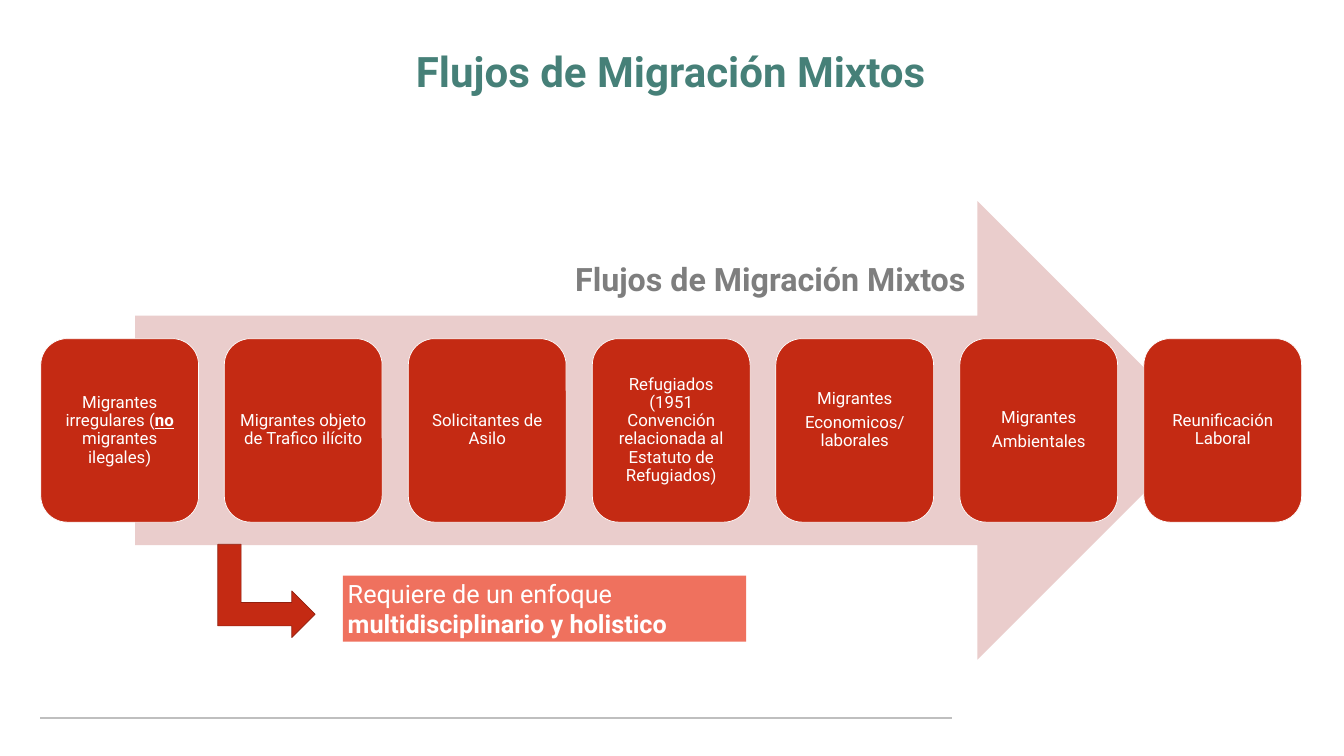
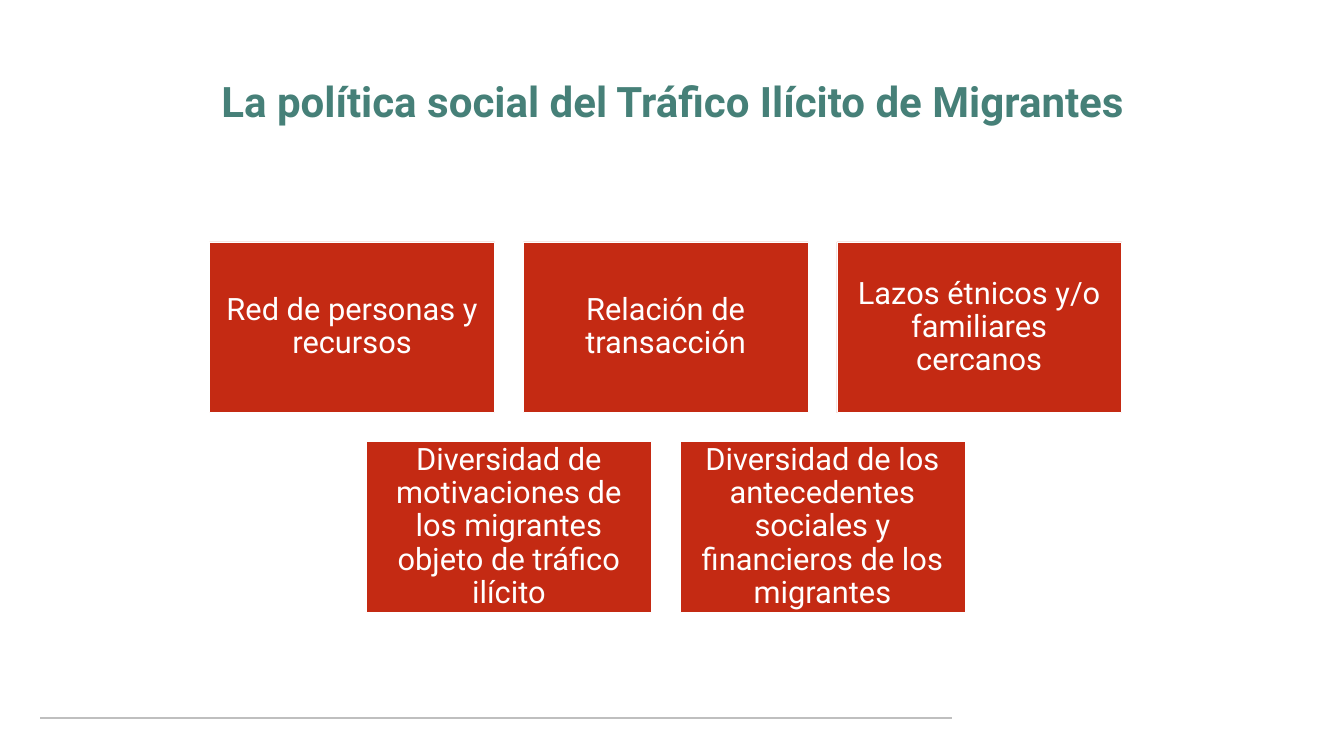
from lxml import etree
from pptx import Presentation
from pptx.dml.color import RGBColor
from pptx.enum.shapes import MSO_CONNECTOR, MSO_SHAPE
from pptx.enum.text import MSO_ANCHOR, PP_ALIGN
from pptx.oxml.ns import qn
from pptx.util import Pt

PX = 9144  # 100 px to the inch
FONT = "Roboto"
C = {"title": "468078", "rule": "BFBFBF", "card": "C42A13", "white": "FFFFFF",
     "flow": "EACDCC", "label": "7E7E7E", "bent": "911F0E", "note": "EF715E"}
RECT, ROUND = MSO_SHAPE.RECTANGLE, MSO_SHAPE.ROUNDED_RECTANGLE
RIGHT_ARROW, BENT_ARROW = MSO_SHAPE.RIGHT_ARROW, MSO_SHAPE.BENT_UP_ARROW
LEFT, CENTER, RIGHT = PP_ALIGN.LEFT, PP_ALIGN.CENTER, PP_ALIGN.RIGHT
TOP, MIDDLE = MSO_ANCHOR.TOP, MSO_ANCHOR.MIDDLE
BOLD = {"bold": True}


def add_box(s, kind, box, fill=None, line=None):
    """Add a preset shape, or a text box when kind is None."""
    box = [v * PX for v in box]
    if kind is None:
        return s.shapes.add_textbox(*box)
    sp = s.shapes.add_shape(kind, *box)
    sp.shadow.inherit = False
    sp.fill.solid()
    sp.fill.fore_color.rgb = RGBColor.from_string(C[fill])
    if line:
        sp.line.color.rgb = RGBColor.from_string(C[line])
        sp.line.width = Pt(1)
    else:
        sp.line.fill.background()
    return sp


def write(sp, paragraphs, size, color="white", align=CENTER, anchor=MIDDLE,
          spacing=0.9, after=0, insets=(10, 10, 10, 10)):
    """Fill sp with paragraphs, each a list of (text, font format) runs."""
    tf = sp.text_frame
    tf.word_wrap = True
    tf.vertical_anchor = anchor
    for side, inset in zip(("left", "top", "right", "bottom"), insets):
        setattr(tf, "margin_" + side, inset * PX)
    for i, runs in enumerate(paragraphs):
        p = tf.add_paragraph() if i else tf.paragraphs[0]
        p.alignment, p.line_spacing, p.space_after = align, spacing, Pt(after)
        for text, extra in runs:
            r = p.add_run()
            r.text = text
            r.font.color.rgb = RGBColor.from_string(C[color])
            for name, value in {"name": FONT, "size": Pt(size), **extra}.items():
                setattr(r.font, name, value)


prs = Presentation()
prs.slide_width, prs.slide_height = 2666 * PX, 1500 * PX

# Shared by both slides: footer rule and title
slides = []
for title, box in [
    ("Flujos de Migración Mixtos", (80, 55, 2501, 185)),
    ("La política social del Tráfico Ilícito de Migrantes", (84, 99, 2501, 215)),
]:
    s = prs.slides.add_slide(prs.slide_layouts[6])
    rule = s.shapes.add_connector(MSO_CONNECTOR.STRAIGHT,
                                  80 * PX, 1425 * PX, 1888 * PX, 1425 * PX)
    rule.line.color.rgb = RGBColor.from_string(C["rule"])
    rule.line.width = Pt(2.25)
    etree.SubElement(rule._element.spPr, qn("a:effectLst"))
    write(add_box(s, None, box), [[(title, BOLD)]], 60, "title",
          insets=(20, 10, 20, 10))
    slides.append(s)
flows, policy = slides

# Slide 1: migrant groups along a wide arrow
add_box(flows, RIGHT_ARROW, (268, 399, 2126, 910), "flow")
groups = [
    [[("Migrantes irregulares (", {}), ("no ", {"bold": True, "underline": True}),
      ("migrantes ilegales)", {})]],
    [[("Migrantes objeto de Trafico ilícito", {})]],
    [[("Solicitantes de Asilo", {})]],
    [[("Refugiados (1951 Convención relacionada al Estatuto de Refugiados)", {})]],
    [[("Migrantes", {})], [("Economicos/laborales", {})]],
    [[("Migrantes", {})], [("Ambientales", {})]],
    [[("Reunificación Laboral", {})]],
]
for i, group in enumerate(groups):
    left = 81 + i * 2188 // (len(groups) - 1)
    card = add_box(flows, ROUND, (left, 672, 313, 364), "card", "white")
    bottom = 52 if i == 4 else 10  # this card's text sits higher
    write(card, group, 24, after=8, insets=(10, 10, 10, bottom))

write(add_box(flows, None, (275, 509, 1650, 88)),
      [[("Flujos de Migración Mixtos", BOLD)]], 46, "label",
      align=RIGHT, anchor=TOP, spacing=1.0, insets=(10, 5, 10, 5))
bent = add_box(flows, BENT_ARROW, (436, 1076, 185, 193), "card", "bent")
bent.rotation = 90
write(add_box(flows, RECT, (680, 1142, 800, 131), "note"),
      [[("Requiere de un enfoque ", {}), ("multidisciplinario y holistico", BOLD)]],
      36, align=LEFT, anchor=TOP, spacing=1.0, insets=(10, 5, 10, 5))

# Slide 2: centred rows of cards
CARD_W, CARD_H, GAP, MID_X = 565, 339, 57, 1320
rows = [
    ["Red de personas y recursos", "Relación de transacción",
     "Lazos étnicos y/o familiares cercanos"],
    ["Diversidad de motivaciones de los migrantes objeto de tráfico ilícito",
     "Diversidad de los antecedentes sociales y financieros de los migrantes"],
]
for i, row in enumerate(rows):
    row_w = len(row) * (CARD_W + GAP) - GAP
    top = 480 + i * (CARD_H + GAP)
    for j, text in enumerate(row):
        left = MID_X - row_w // 2 + j * (CARD_W + GAP)
        card = add_box(policy, RECT, (left, top, CARD_W, CARD_H), "card", "white")
        write(card, [[(text, {})]], 44, insets=(18, 18, 18, 18))

prs.save("out.pptx")
